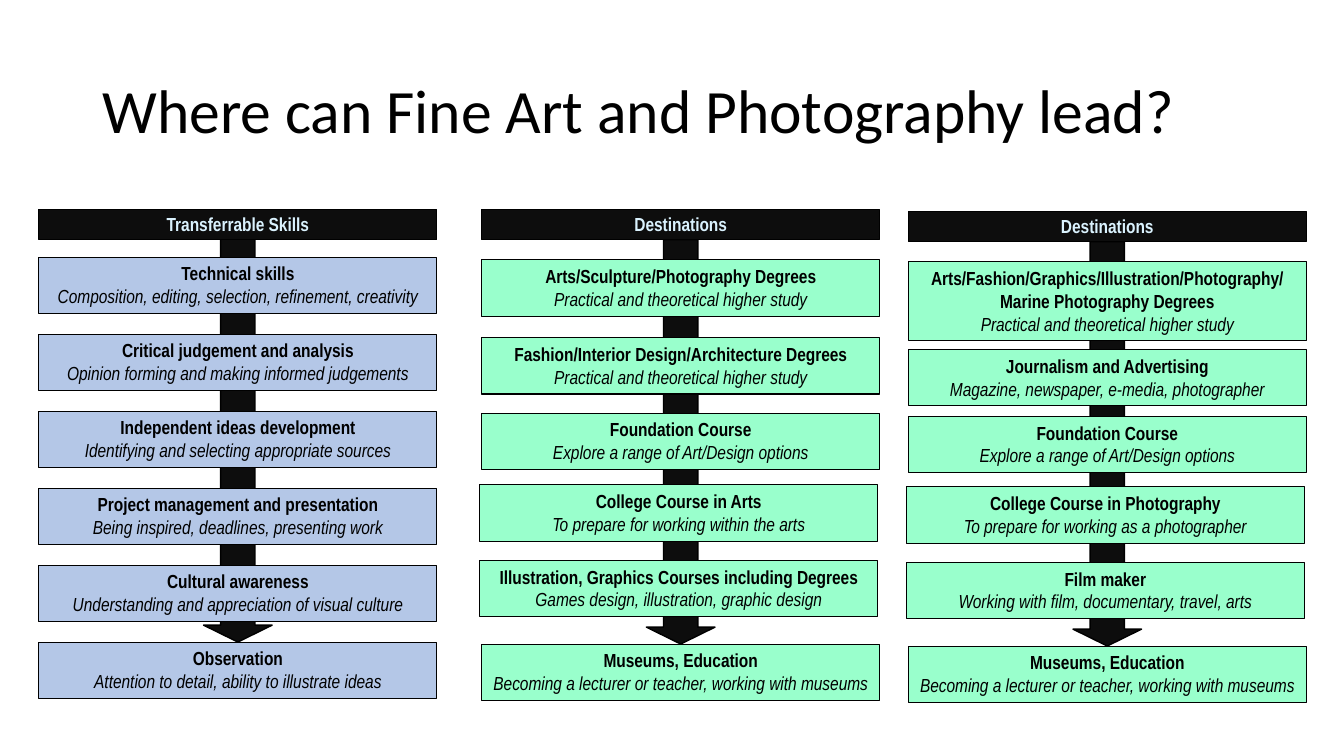
from pptx import Presentation
from pptx.dml.color import RGBColor
from pptx.enum.shapes import MSO_SHAPE
from pptx.enum.text import MSO_ANCHOR, MSO_AUTO_SIZE, PP_ALIGN
from pptx.util import Cm, Pt

RECT = MSO_SHAPE.RECTANGLE
ARROW = MSO_SHAPE.DOWN_ARROW
MIDDLE = MSO_ANCHOR.MIDDLE
BOTTOM = MSO_ANCHOR.BOTTOM
GROW = MSO_AUTO_SIZE.SHAPE_TO_FIT_TEXT
CENTER = PP_ALIGN.CENTER

COLORS = {
    "black": "000000",
    "dark": "0D0D0D",
    "pale": "DAF2FE",
    "blue": "B4C7E7",
    "mint": "99FFCC",
}
WIDTH = 10.03
HEAD_W, HEAD_H = 1.73, 10.19
BOX_H, TALL_H = 1.42, 1.98
NUDGE = -0.05

SKILLS = [
    ("Technical skills", "Composition, editing, selection, refinement, creativity"),
    ("Critical judgement and analysis", "Opinion forming and making informed judgements"),
    ("Independent ideas development", "Identifying and selecting appropriate sources"),
    ("Project management and presentation", "Being inspired, deadlines, presenting work"),
    ("Cultural awareness", "Understanding and appreciation of visual culture"),
    ("Observation", "Attention to detail, ability to illustrate ideas"),
]
STUDY = "Practical and theoretical higher study"
BASE = ("Foundation Course", "Explore a range of Art/Design options")
TEACH = ("Museums, Education", "Becoming a lecturer or teacher, working with museums")
ART = [
    ("Arts/Sculpture/Photography Degrees", STUDY),
    ("Fashion/Interior Design/Architecture Degrees", STUDY),
    BASE,
    ("College Course in Arts", "To prepare for working within the arts"),
    ("Illustration, Graphics Courses including Degrees",
     "Games design, illustration, graphic design"),
    TEACH,
]
PHOTO = [
    ("Arts/Fashion/Graphics/Illustration/Photography/ Marine Photography Degrees", STUDY),
    ("Journalism and Advertising", "Magazine, newspaper, e-media, photographer"),
    BASE,
    ("College Course in Photography", "To prepare for working as a photographer"),
    ("Film maker", "Working with film, documentary, travel, arts"),
    TEACH,
]


def color(name):
    return RGBColor.from_string(COLORS[name])


def style(par, size, face, tint, bold=False, italic=False):
    for run in par.runs:
        font = run.font
        font.size, font.name = Pt(size), face
        font.bold, font.italic = bold, italic
        font.color.rgb = color(tint)


def add_shape(shapes, kind, left, top, width, height, fill, line=0.75):
    shape = shapes.add_shape(kind, Cm(left), Cm(top), Cm(width), Cm(height))
    shape.shadow.inherit = False
    shape.fill.solid()
    shape.fill.fore_color.rgb = color(fill)
    shape.line.color.rgb = color("black")
    shape.line.width = Pt(line)
    return shape


def add_arrow(shapes, left, end):
    arrow = add_shape(shapes, ARROW, left + (WIDTH - HEAD_W) / 2, end - HEAD_H,
                      HEAD_W, HEAD_H, "dark", 1)
    arrow.adjustments[0] = 0.5
    arrow.adjustments[1] = 0.246


def add_head(shapes, left, top, text):
    frame = add_shape(shapes, RECT, left, top, WIDTH, 0.76, "dark").text_frame
    frame.word_wrap = True
    frame.vertical_anchor = BOTTOM
    frame.margin_left = frame.margin_right = Cm(0.18)
    frame.margin_top = frame.margin_bottom = Cm(0.1)
    frame.text = text
    par = frame.paragraphs[0]
    par.alignment = CENTER
    par.line_spacing = 0.9
    style(par, 13.5, "Arial Narrow", "pale", bold=True)


def add_card(shapes, left, top, height, fill, texts):
    frame = add_shape(shapes, RECT, left, top, WIDTH, height, fill).text_frame
    frame.word_wrap = True
    frame.auto_size = GROW
    frame.vertical_anchor = MSO_ANCHOR.TOP
    frame.text = "\n".join(texts)
    for i, par in enumerate(frame.paragraphs):
        par.alignment = CENTER
        style(par, 13.5, "Arial Narrow", "black", bold=i == 0, italic=i == 1)


def add_column(slide, left, top, title, fill, cards, tops, first=BOX_H, moved=()):
    shapes = slide.shapes.add_group_shape().shapes
    add_arrow(shapes, left, tops[-1])
    add_head(shapes, left, top, title)
    for i, (texts, y) in enumerate(zip(cards, tops)):
        x = left + NUDGE if i in moved else left
        add_card(shapes, x, y, BOX_H if i else first, fill, texts)


def add_title(slide, text):
    box = slide.shapes.add_textbox(Cm(2.33), Cm(1.01), Cm(29.21), Cm(3.68))
    frame = box.text_frame
    frame.word_wrap = True
    frame.vertical_anchor = MIDDLE
    frame.text = text
    par = frame.paragraphs[0]
    par.line_spacing = 0.9
    style(par, 44, "Calibri", "black")


def main():
    deck = Presentation()
    deck.slide_width, deck.slide_height = Cm(33.87), Cm(19.05)
    slide = deck.slides.add_slide(deck.slide_layouts[6])
    add_title(slide, "Where can Fine Art and Photography lead?")
    even = [6.48 + 1.94 * i for i in range(len(SKILLS))]
    add_column(slide, 0.98, 5.28, "Transferrable Skills", "blue", SKILLS, even)
    add_column(slide, 12.14, 5.28, "Destinations", "mint", ART,
               [6.55, 8.51, 10.41, 12.22, 14.12, 16.23], moved=(3, 4))
    add_column(slide, 22.89, 5.33, "Destinations", "mint", PHOTO,
               [6.6, 8.81, 10.49, 12.27, 14.17, 16.28], TALL_H, moved=(3, 4))
    deck.save("out.pptx")


if __name__ == "__main__":
    main()
